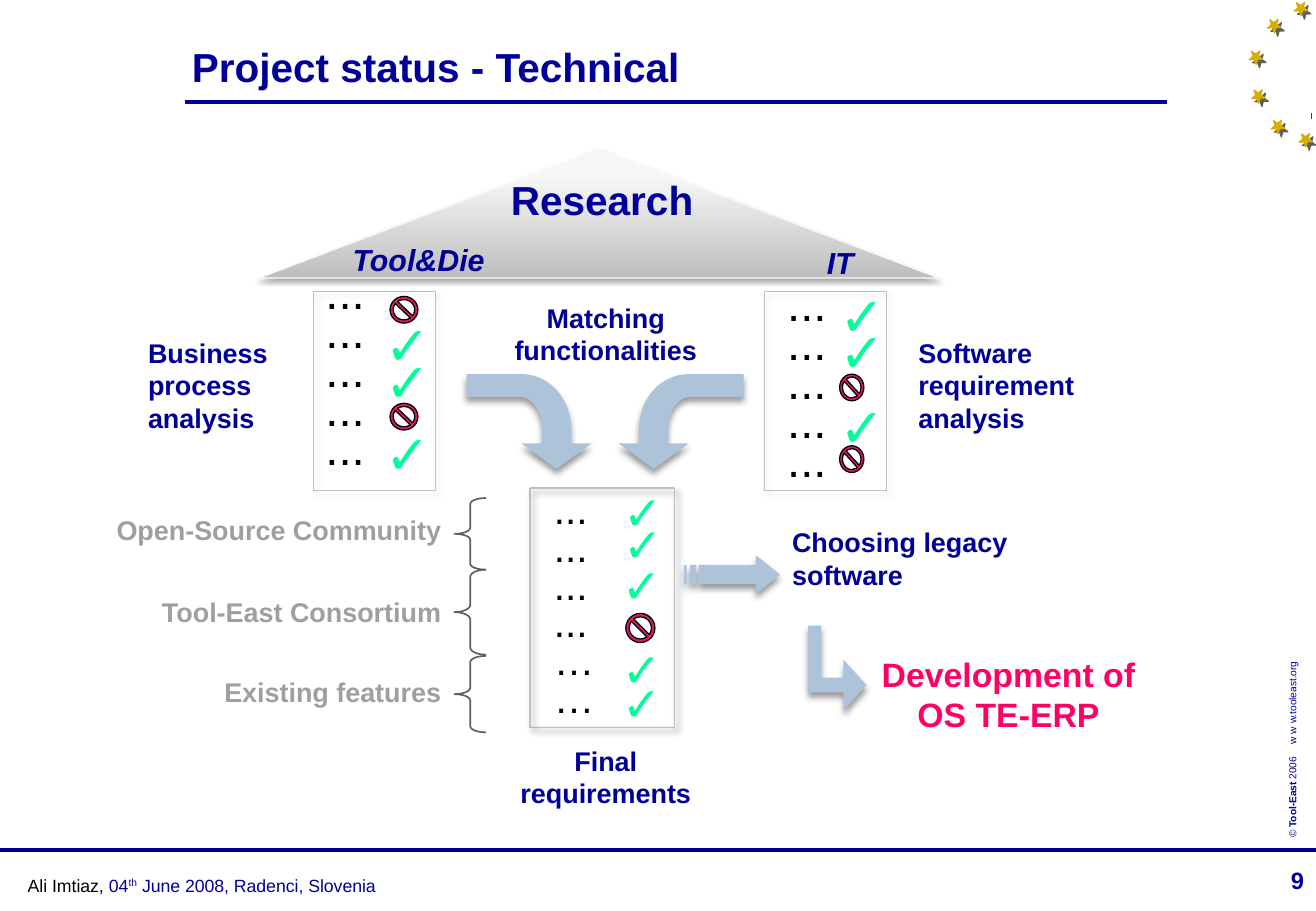
import pptx
import pptx.util
import pptx.dml.color
import pptx.enum.shapes
import pptx.enum.text
import pptx.oxml

PX = 9144
NAVY = pptx.dml.color.RGBColor(0x00, 0x00, 0x99)
BLACK = pptx.dml.color.RGBColor(0x00, 0x00, 0x00)
PINK = pptx.dml.color.RGBColor(0xFF, 0x00, 0x66)
MINT = pptx.dml.color.RGBColor(0x00, 0xFF, 0x99)
CRIMSON = pptx.dml.color.RGBColor(0xDC, 0x19, 0x69)
STEEL = pptx.dml.color.RGBColor(0xAD, 0xC3, 0xD9)
GOLD = pptx.dml.color.RGBColor(0xD6, 0xAD, 0x00)
GRAY = pptx.dml.color.RGBColor(0x9F, 0x9F, 0x9F)
DARK_GRAY = pptx.dml.color.RGBColor(0x5F, 0x5F, 0x5F)
FRAME_GRAY = pptx.dml.color.RGBColor(0xBF, 0xBF, 0xBF)
SPECK = pptx.dml.color.RGBColor(0x42, 0x3A, 0x3A)
ROOF_EDGE = pptx.dml.color.RGBColor(0xF9, 0xF9, 0xF9)
ROOF_DARK = pptx.dml.color.RGBColor(0xBE, 0xBE, 0xBE)
ROOF_LIGHT = pptx.dml.color.RGBColor(0xF7, 0xF7, 0xF7)

DOWN_SHADOW = (BLACK, 40, 4, 3, 90)
FRAME_SHADOW = (BLACK, 40, 4, 3, 45)
STAR_SHADOW = (DARK_GRAY, 100, 0, 2.8, 45)
ROOF_SHADOW = (BLACK, 35, 3.1, 1.8, 90)

SHAPE = pptx.enum.shapes.MSO_SHAPE
LEFT = pptx.enum.text.PP_ALIGN.LEFT
CENTER = pptx.enum.text.PP_ALIGN.CENTER
RIGHT = pptx.enum.text.PP_ALIGN.RIGHT
MIDDLE = pptx.enum.text.MSO_ANCHOR.MIDDLE
NS = 'xmlns:a="http://schemas.openxmlformats.org/drawingml/2006/main"'

deck = pptx.Presentation()
deck.slide_width = 1083 * PX
deck.slide_height = 750 * PX
slide = deck.slides.add_slide(deck.slide_layouts[5])
shapes = slide.shapes


def paint(shape, fill, line, width, shadow=None):
    if fill is not None:
        shape.fill.solid()
        shape.fill.fore_color.rgb = fill
    if line is None:
        shape.line.fill.background()
    else:
        shape.line.color.rgb = line
        shape.line.width = pptx.util.Pt(width)
    effect = ""
    if shadow:
        color, alpha, blur, distance, angle = shadow
        effect = (f'<a:outerShdw blurRad="{int(blur * 12700)}" dist="{int(distance * 12700)}" '
                  f'dir="{angle * 60000}" algn="ctr" rotWithShape="0"><a:srgbClr val="{color}">'
                  f'<a:alpha val="{alpha * 1000}"/></a:srgbClr></a:outerShdw>')
    shape._element.spPr.append(pptx.oxml.parse_xml(f"<a:effectLst {NS}>{effect}</a:effectLst>"))


def add_text(box, text, size, color, align=LEFT, bold=False, italic=False):
    x, y, w, h = box
    label = shapes.add_textbox(x * PX, y * PX, w * PX, h * PX)
    frame = label.text_frame
    frame.word_wrap = True
    frame.text = text
    for paragraph in frame.paragraphs:
        paragraph.alignment = align
        for run in paragraph.runs:
            run.font.name = "Arial"
            run.font.size = pptx.util.Pt(size)
            run.font.color.rgb = color
            run.font.bold = bold
            run.font.italic = italic
    return label


title = shapes.title
title.left, title.top, title.width, title.height = 148 * PX, 29 * PX, 733 * PX, 51 * PX
title.text_frame.text = "Project status - Technical"
title.text_frame.vertical_anchor = MIDDLE
heading = title.text_frame.paragraphs[0]
heading.alignment = LEFT
heading.font.name = "Arial"
heading.font.size = pptx.util.Pt(24)
heading.font.bold = True
heading.font.color.rgb = NAVY

for x, y in [(1069, 110), (1030, 74), (1046, 99), (1028, 42), (1065, 2), (1043, 16)]:
    star = shapes.add_shape(SHAPE.STAR_5_POINT, x * PX, y * PX, 11 * PX, 11 * PX)
    star.rotation = 177.9
    paint(star, GOLD, GOLD, 0.75, STAR_SHADOW)

roof = shapes.add_shape(SHAPE.ISOSCELES_TRIANGLE, 213 * PX, 123 * PX, 560 * PX, 106 * PX)
roof.fill.gradient()
roof.fill.gradient_angle = 90
for stop, color, position in zip(roof.fill.gradient_stops, (ROOF_DARK, ROOF_LIGHT), (0, 0.8)):
    stop.color.rgb = color
    stop.position = position
paint(roof, None, ROOF_EDGE, 0.75, ROOF_SHADOW)

for x1, y1, x2, y2, color, width, shadow in [
    (0, 700, 1083, 700, NAVY, 2.25, None),
    (152, 84, 960, 84, NAVY, 2.25, None),
    (1079, 93, 1079, 98, SPECK, 0.5, None),
    (436, 402, 555, 402, FRAME_GRAY, 1, FRAME_SHADOW),
    (436, 599, 555, 599, FRAME_GRAY, 1, FRAME_SHADOW),
    (436, 402, 436, 599, FRAME_GRAY, 1, FRAME_SHADOW),
    (555, 402, 555, 599, FRAME_GRAY, 1, FRAME_SHADOW),
]:
    rule = shapes.add_connector(
        pptx.enum.shapes.MSO_CONNECTOR.STRAIGHT, x1 * PX, y1 * PX, x2 * PX, y2 * PX)
    paint(rule, None, color, width, shadow)

bends = []
for curve in [[(470, 353), (470, 328), (452, 308), (429, 308)],
              [(429, 327), (438, 327), (446, 339), (446, 353)]]:
    bend = []
    for step in range(17):
        t = step / 16
        weights = ((1 - t) ** 3, 3 * t * (1 - t) ** 2, 3 * t * t * (1 - t), t ** 3)
        bend.append(tuple(sum(k * p[axis] for k, p in zip(weights, curve)) for axis in (0, 1)))
    bends.append(bend)
matching = ([(458, 386), (487, 365), (470, 365)] + bends[0]
            + [(384, 308), (384, 327)] + bends[1] + [(446, 365), (429, 365)])
mirrored = [(996 - x, y) for x, y in matching]
choosing = [(622, 457), (622, 465), (575, 465), (575, 481), (622, 481), (622, 489), (642, 473)]
stripes = [[(x1, 465), (x1, 481), (x2, 481), (x2, 465)] for x1, x2 in [(568, 573), (563, 565)]]
development = [(713, 564), (694, 543), (694, 558), (676, 558), (676, 515),
               (665, 515), (665, 570), (694, 570), (694, 585)]
for outlines in [[matching], [mirrored], [choosing] + stripes, [development]]:
    scaled = [[(x * PX, y * PX) for x, y in outline] for outline in outlines]
    builder = shapes.build_freeform(*scaled[0][0], scale=1.0)
    builder.add_line_segments(scaled[0][1:], close=True)
    for outline in scaled[1:]:
        builder.move_to(*outline[0])
        builder.add_line_segments(outline[1:], close=True)
    paint(builder.convert_to_shape(), STEEL, None, 0, DOWN_SHADOW)

for x in (258, 629):
    pillar = shapes.add_shape(SHAPE.RECTANGLE, x * PX, 240 * PX, 100 * PX, 164 * PX)
    pillar.fill.background()
    paint(pillar, None, FRAME_GRAY, 0.25, FRAME_SHADOW)

for x, y, w, h in [(321, 244, 23, 22), (321, 332, 23, 22), (691, 367, 20, 22),
                   (691, 308, 20, 22), (515, 505, 24, 24)]:
    missing = shapes.add_shape(SHAPE.NO_SYMBOL, x * PX, y * PX, w * PX, h * PX)
    missing.adjustments[0] = 0.12
    paint(missing, CRIMSON, BLACK, 0.75)

for x, y, w, h, size in [
    (307, 252, 60, 63, 32), (307, 282, 60, 63, 32), (307, 341, 60, 63, 32),
    (681, 228, 60, 63, 32), (681, 257, 60, 63, 32), (681, 319, 60, 63, 32),
    (503, 393, 56, 57, 28), (503, 419, 56, 57, 28), (502, 453, 56, 57, 28),
    (502, 522, 56, 57, 28), (502, 550, 56, 57, 28),
]:
    add_text((x, y, w, h), "✓", size, MINT).text_frame.vertical_anchor = MIDDLE

for box, dots, size, gap in [
    ((258, 231, 88, 154), ["..."] * 5, 28, 6.4),
    ((638, 241, 88, 154), ["..."] * 5, 28, 6.4),
    ((446, 411, 60, 190), ["..."] * 4 + ["…"] * 2, 24, 8),
]:
    items = add_text(box, "\n".join(dots), size, BLACK).text_frame.paragraphs
    for index, item in enumerate(items):
        item.line_spacing = 0.5
        if index:
            item.space_before = pptx.util.Pt(gap)

for y, h, curl in [(410, 59, 0.19), (469, 70, 0.23), (540, 63, 0.2)]:
    brace = shapes.add_shape(SHAPE.LEFT_BRACE, 374 * PX, y * PX, 26 * PX, h * PX)
    brace.adjustments[0] = curl
    brace.fill.background()
    paint(brace, None, DARK_GRAY, 1)

for box, text, size, color, align, italic in [
    ((389, 139, 213, 50), "Research", 24, NAVY, CENTER, False),
    ((235, 194, 219, 40), "Tool&Die", 18, NAVY, CENTER, True),
    ((656, 196, 71, 40), "IT", 18, NAVY, CENTER, True),
    ((394, 243, 209, 64), "Matching functionalities", 16, NAVY, CENTER, False),
    ((112, 272, 133, 91), "Business process analysis", 16, NAVY, LEFT, False),
    ((746, 272, 178, 91), "Software requirement analysis", 16, NAVY, LEFT, False),
    ((642, 428, 241, 64), "Choosing legacy software", 16, NAVY, LEFT, False),
    ((705, 533, 250, 77), "Development of OS TE-ERP", 20, PINK, CENTER, False),
    ((394, 608, 209, 64), "Final requirements", 16, NAVY, CENTER, False),
    ((38, 418, 335, 37), "Open-Source Community", 16, GRAY, RIGHT, False),
    ((38, 485, 335, 37), "Tool-East Consortium", 16, GRAY, RIGHT, False),
    ((38, 551, 335, 37), "Existing features", 16, GRAY, RIGHT, False),
    ((875, 708, 208, 33), "9", 14, NAVY, RIGHT, False),
]:
    add_text(box, text, size, color, align, True, italic)

footer = add_text((13, 715, 323, 28), "Ali Imtiaz, ", 10.5, BLACK).text_frame.paragraphs[0]
for text, baseline in [("04", 0), ("th", 30000), (" June 2008, Radenci, Slovenia", 0)]:
    part = footer.add_run()
    part.text = text
    part.font.name = "Arial"
    part.font.size = pptx.util.Pt(10.5)
    part.font.color.rgb = NAVY
    part._r.get_or_add_rPr().set("baseline", str(baseline))

rights = add_text((946, 572, 235, 20), "© ", 6, NAVY)
rights.rotation = 270
notice = rights.text_frame.paragraphs[0]
notice._p.get_or_add_pPr().append(
    pptx.oxml.parse_xml(f'<a:tabLst {NS}><a:tab pos="{77 * PX}" algn="l"/></a:tabLst>'))
for text, bold in [("Tool-East", True), (" 2006\tw w w.tooleast.org", False)]:
    part = notice.add_run()
    part.text = text
    part.font.name = "Arial"
    part.font.size = pptx.util.Pt(6)
    part.font.bold = bold
    part.font.color.rgb = NAVY

deck.save("out.pptx")
